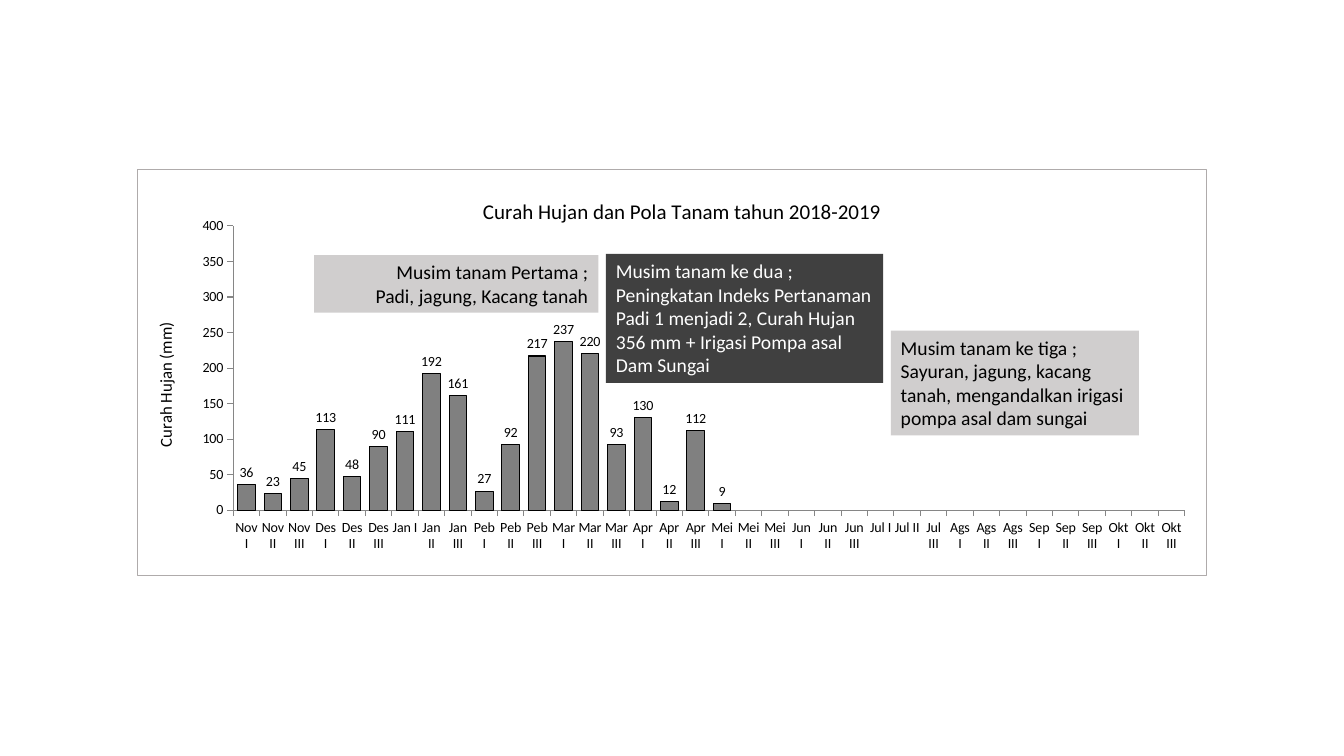
from pptx import Presentation
from pptx.chart.data import CategoryChartData
from pptx.dml.color import RGBColor
from pptx.enum.chart import XL_CHART_TYPE, XL_LABEL_POSITION, XL_TICK_MARK
from pptx.enum.shapes import MSO_SHAPE
from pptx.enum.text import MSO_ANCHOR, PP_ALIGN
from pptx.oxml import parse_xml
from pptx.oxml.ns import nsdecls, qn
from pptx.util import Cm, Pt

FONT = "Calibri"
COLORS = {
    "text": "000000",
    "white": "FFFFFF",
    "bar": "808080",
    "axis": "868686",
    "border": "AFABAB",
    "light": "D0CECE",
    "dark": "404040",
}
MONTHS = ["Nov", "Des", "Jan", "Peb", "Mar", "Apr",
          "Mei", "Jun", "Jul", "Ags", "Sep", "Okt"]
PERIODS = [f"{month} {part}" for month in MONTHS for part in ("I", "II", "III")]
RAINFALL = [36, 23, 45, 113, 48, 90, 111, 192, 161, 27, 92, 217,
            237, 220, 93, 130, 12, 112, 9]


def rgb(name):
    return RGBColor.from_string(COLORS[name])


def format_font(font, size, color="text"):
    font.name = FONT
    font.size = Pt(size)
    font.bold = False
    font.color.rgb = rgb(color)


def set_title(owner, text, size):
    """Title a chart or an axis."""
    tf = (owner.chart_title if hasattr(owner, "chart_title")
          else owner.axis_title).text_frame
    tf.text = text
    format_font(tf.paragraphs[0].runs[0].font, size)


def set_layout(parent, index, target="", **fractions):
    """Place a chart part by fractions of the chart's size."""
    for old in parent.findall(qn("c:layout")):
        parent.remove(old)
    inner = f'<c:layoutTarget val="{target}"/>' if target else ""
    inner += "".join(f'<c:{key}Mode val="edge"/>' for key in "xy")
    inner += "".join(f'<c:{key} val="{value}"/>' for key, value in fractions.items())
    parent.insert(index, parse_xml(
        f'<c:layout {nsdecls("c")}><c:manualLayout>{inner}</c:manualLayout></c:layout>'))


def set_border(chart):
    chart_part = chart._chartSpace.find(qn("c:chart"))
    chart_part.addnext(parse_xml(
        f'<c:spPr {nsdecls("c", "a")}><a:noFill/><a:ln w="{Pt(0.75)}"><a:solidFill>'
        f'<a:srgbClr val="{COLORS["border"]}"/></a:solidFill></a:ln></c:spPr>'))


def format_axes(chart):
    for axis in (chart.category_axis, chart.value_axis):
        axis.has_major_gridlines = False
        axis.major_tick_mark = XL_TICK_MARK.OUTSIDE
        axis.minor_tick_mark = XL_TICK_MARK.NONE
        axis.format.line.color.rgb = rgb("axis")
        axis.format.line.width = Pt(0.75)
        format_font(axis.tick_labels.font, 10)
    axis = chart.value_axis
    axis.minimum_scale, axis.maximum_scale, axis.major_unit = 0, 400, 50
    axis.tick_labels.number_format = "#,##0"
    axis.tick_labels.number_format_is_linked = False
    set_title(axis, "Curah Hujan (mm)", 12)


def format_bars(plot):
    plot.gap_width = 51
    plot.vary_by_categories = False
    bars = plot.series[0].format
    bars.fill.solid()
    bars.fill.fore_color.rgb = rgb("bar")
    bars.line.color.rgb = rgb("text")
    bars.line.width = Pt(0.75)
    plot.has_data_labels = True
    labels = plot.data_labels
    labels.show_value = True
    labels.position = XL_LABEL_POSITION.OUTSIDE_END
    format_font(labels.font, 10)


def add_rainfall_chart(s):
    data = CategoryChartData()
    data.categories = PERIODS
    data.add_series("Curah Hujan",
                    RAINFALL + [None] * (len(PERIODS) - len(RAINFALL)))
    chart = s.shapes.add_chart(XL_CHART_TYPE.COLUMN_CLUSTERED, Cm(3.44), Cm(4.25),
                               Cm(26.97), Cm(10.26), data).chart
    format_font(chart.font, 10)
    chart.has_legend = False
    set_title(chart, "Curah Hujan dan Pola Tanam tahun 2018-2019", 15)
    chart.chart_title.include_in_layout = True
    title = chart._chartSpace.find(".//" + qn("c:chart") + "/" + qn("c:title"))
    set_layout(title, 1, x=0.32, y=0.06)
    title.find(qn("c:overlay")).set("val", "1")
    format_axes(chart)
    format_bars(chart.plots[0])
    set_layout(chart._chartSpace.find(".//" + qn("c:plotArea")), 0, "inner",
               x=0.09, y=0.14, w=0.89, h=0.7)
    set_border(chart)


def add_season_box(s, left, top, width, height, lines, fill="light",
                   color="text", align=PP_ALIGN.LEFT):
    sp = s.shapes.add_shape(MSO_SHAPE.RECTANGLE, Cm(left), Cm(top),
                            Cm(width), Cm(height))
    sp.shadow.inherit = False
    sp.fill.solid()
    sp.fill.fore_color.rgb = rgb(fill)
    sp.line.fill.background()
    tf = sp.text_frame
    tf.word_wrap = True
    tf.vertical_anchor = MSO_ANCHOR.TOP
    tf.text = "\n".join(lines)
    for p in tf.paragraphs:
        p.alignment = align
        for r in p.runs:
            format_font(r.font, 14, color)


def main():
    prs = Presentation()
    prs.slide_width, prs.slide_height = Cm(33.87), Cm(19.05)
    s = prs.slides.add_slide(prs.slide_layouts[6])
    add_rainfall_chart(s)
    add_season_box(s, 7.92, 6.43, 7.16, 1.45,
                   ["Musim tanam Pertama ;", "Padi, jagung, Kacang tanah"],
                   align=PP_ALIGN.RIGHT)
    add_season_box(s, 15.27, 6.4, 6.99, 3.25,
                   ["Musim tanam ke dua ;",
                    "Peningkatan Indeks Pertanaman Padi 1 menjadi 2, "
                    "Curah Hujan 356 mm + Irigasi Pompa asal Dam Sungai"],
                   fill="dark", color="white")
    add_season_box(s, 22.45, 8.33, 6.25, 2.64,
                   ["Musim tanam ke tiga ;",
                    "Sayuran, jagung, kacang tanah, mengandalkan irigasi "
                    "pompa asal dam sungai"])
    prs.save("out.pptx")


if __name__ == "__main__":
    main()
